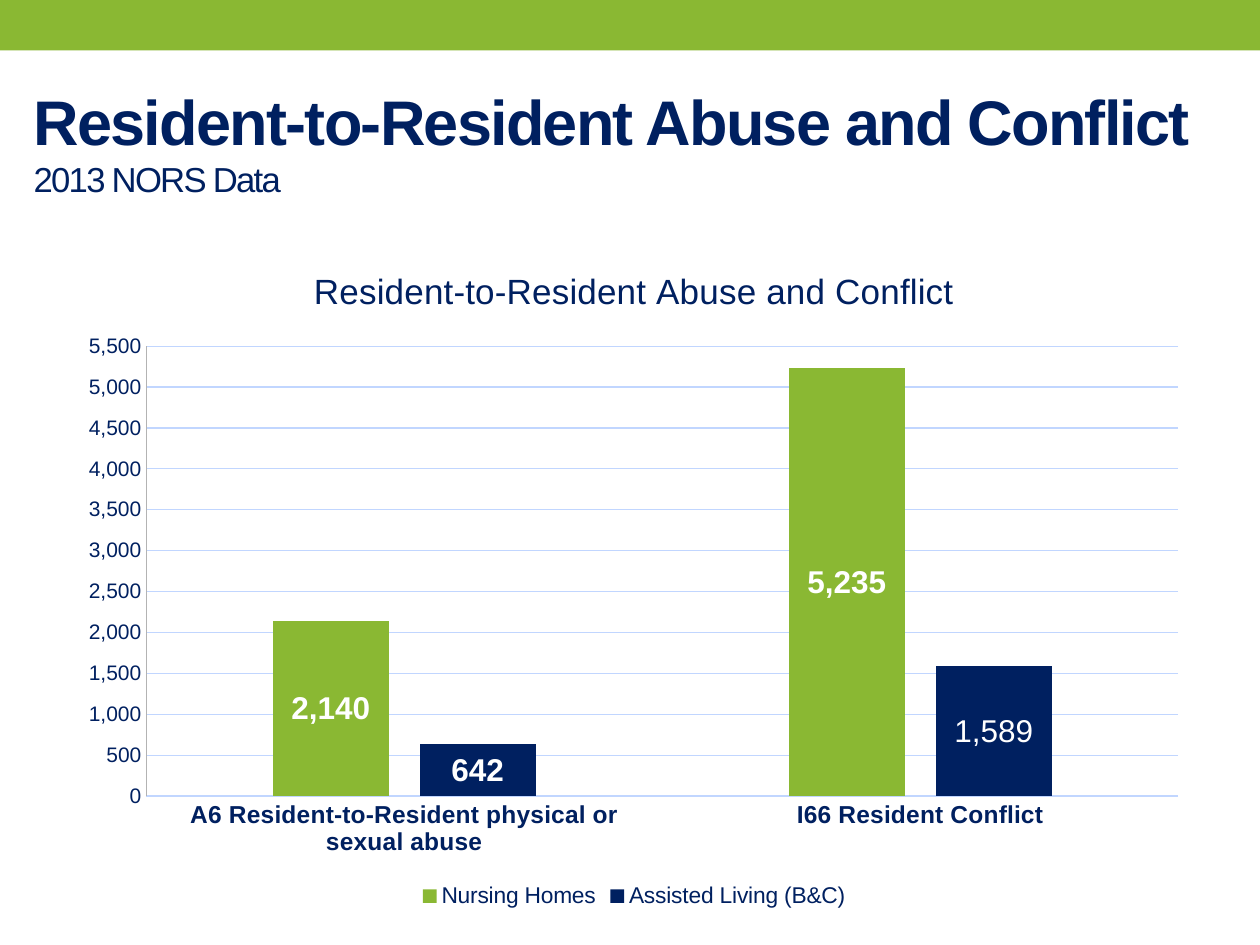
from lxml import etree
from pptx import Presentation
from pptx.chart.data import CategoryChartData
from pptx.dml.color import RGBColor
from pptx.enum.chart import XL_CHART_TYPE, XL_LABEL_POSITION, XL_LEGEND_POSITION, XL_TICK_MARK
from pptx.enum.shapes import MSO_SHAPE
from pptx.enum.text import MSO_ANCHOR
from pptx.oxml.ns import qn
from pptx.util import Cm, Pt

COLUMN = XL_CHART_TYPE.COLUMN_CLUSTERED
CENTER = XL_LABEL_POSITION.CENTER
BOTTOM = XL_LEGEND_POSITION.BOTTOM
NO_TICK = XL_TICK_MARK.NONE
RECT = MSO_SHAPE.RECTANGLE
MIDDLE = MSO_ANCHOR.MIDDLE
COLORS = {"green": "8AB833", "navy": "002060", "grid": "C1D6FF",
          "axis": "B3B3B3", "white": "FFFFFF"}
HEAD = "Resident-to-Resident Abuse and Conflict"


def rgb(name):
    return RGBColor.from_string(COLORS[name])


def style(font, size, color="navy", bold=False):
    font.name = "Arial"
    font.size = Pt(size)
    font.bold = bold
    font.color.rgb = rgb(color)


prs = Presentation()
prs.slide_width, prs.slide_height = Cm(25.4), Cm(19.05)
slide = prs.slides.add_slide(prs.slide_layouts[6])

# Top band
band = slide.shapes.add_shape(RECT, 0, 0, prs.slide_width, Cm(1.02))
band.shadow.inherit = False
band.fill.solid()
band.fill.fore_color.rgb = rgb("green")
band.line.fill.background()

# Heading
box = slide.shapes.add_textbox(Cm(0.43), Cm(1.47), Cm(24.33), Cm(2.74))
frame = box.text_frame
frame.word_wrap = True
frame.vertical_anchor = MIDDLE
frame.text = HEAD + "\n2013 NORS Data"
for para, size, bold in zip(frame.paragraphs, (36, 19.8), (True, False)):
    style(para.font, size, bold=bold)
    para.runs[0]._r.get_or_add_rPr().set("spc", "-100")

# Chart
data = CategoryChartData(number_format="#,##0")
data.categories = ["A6 Resident-to-Resident physical or sexual abuse",
                   "I66 Resident Conflict"]
data.add_series("Nursing Homes", (2140, 5235))
data.add_series("Assisted Living (B&C)", (642, 1589))
chart = slide.shapes.add_chart(
    COLUMN, Cm(1.35), Cm(4.88), Cm(22.86), Cm(13.54), data).chart
style(chart.font, 10)

title = chart.chart_title
title.text_frame.text = HEAD
style(title.text_frame.paragraphs[0].font, 20)
title.include_in_layout = False

chart.has_legend = True
chart.legend.position = BOTTOM
chart.legend.include_in_layout = False
style(chart.legend.font, 13)

cat, val = chart.category_axis, chart.value_axis
for axis, size, bold, color in ((cat, 14, True, "grid"), (val, 12, False, "axis")):
    axis.major_tick_mark = axis.minor_tick_mark = NO_TICK
    style(axis.tick_labels.font, size, bold=bold)
    axis.format.line.color.rgb = rgb(color)
    axis.format.line.width = Pt(0.75)
val.minimum_scale, val.maximum_scale, val.major_unit = 0, 5500, 500
val.tick_labels.number_format = "#,##0"
val.tick_labels.number_format_is_linked = False
grid = val.major_gridlines.format.line
grid.color.rgb = rgb("grid")
grid.width = Pt(0.75)

plot = chart.plots[0]
plot.vary_by_categories = False
plot.gap_width, plot.overlap = 219, -27
for series, color in zip(plot.series, ("green", "navy")):
    series.format.fill.solid()
    series.format.fill.fore_color.rgb = rgb(color)
    labels = series.data_labels
    labels.show_value = True
    labels.position = CENTER
    labels.number_format = "#,##0"
    labels.number_format_is_linked = False
    style(labels.font, 18, "white", True)

# The last label alone is not bold
label = plot.series[1].points[1].data_label
style(label.font, 18, "white")
label.position = CENTER

# Fix the inner plot area as shares of the chart
area = chart._chartSpace.chart.plotArea
for old in area.findall(qn("c:layout")):
    area.remove(old)
layout = etree.Element(qn("c:layout"))
area.insert(0, layout)
manual = etree.SubElement(layout, qn("c:manualLayout"))
for tag, value in (("layoutTarget", "inner"), ("xMode", "edge"), ("yMode", "edge"),
                   ("x", 0.07), ("y", 0.155), ("w", 0.91), ("h", 0.67)):
    etree.SubElement(manual, qn("c:" + tag)).set("val", str(value))

prs.save("out.pptx")
